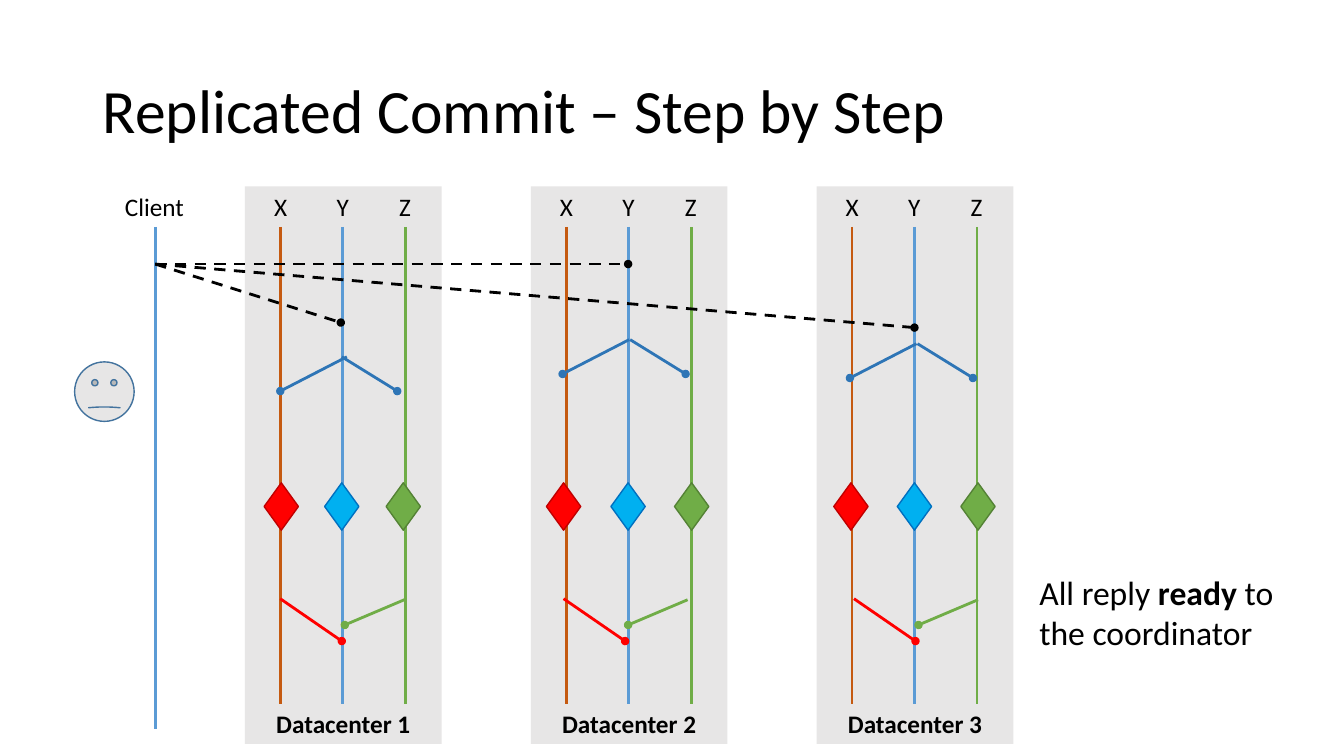
from dataclasses import dataclass

from lxml import etree
from pptx import Presentation
from pptx.dml.color import RGBColor
from pptx.enum.dml import MSO_LINE
from pptx.enum.shapes import MSO_CONNECTOR, MSO_SHAPE
from pptx.enum.text import MSO_ANCHOR, MSO_AUTO_SIZE, PP_ALIGN
from pptx.oxml.ns import qn
from pptx.shapes.autoshape import Shape
from pptx.slide import Slide
from pptx.util import Inches, Pt

STRAIGHT = MSO_CONNECTOR.STRAIGHT
DASH = MSO_LINE.DASH
RECTANGLE, DIAMOND, SMILEY = MSO_SHAPE.RECTANGLE, MSO_SHAPE.DIAMOND, MSO_SHAPE.SMILEY_FACE
MIDDLE, BOTTOM = MSO_ANCHOR.MIDDLE, MSO_ANCHOR.BOTTOM
CENTER = PP_ALIGN.CENTER
FIT_SHAPE = MSO_AUTO_SIZE.SHAPE_TO_FIT_TEXT

FONT = "Calibri"
BLACK = RGBColor(0x00, 0x00, 0x00)
GREY = RGBColor(0xE7, 0xE6, 0xE6)
ORANGE = RGBColor(0xC5, 0x5A, 0x11)
BLUE = RGBColor(0x5B, 0x9B, 0xD5)
MID_BLUE = RGBColor(0x2E, 0x75, 0xB6)
FACE_BLUE = RGBColor(0x43, 0x73, 0x9E)
SKY = RGBColor(0x00, 0xB0, 0xF0)
SKY_EDGE = RGBColor(0x00, 0x70, 0xC0)
GREEN = RGBColor(0x70, 0xAD, 0x47)
GREEN_EDGE = RGBColor(0x54, 0x82, 0x35)
RED = RGBColor(0xFF, 0x00, 0x00)
RED_EDGE = RGBColor(0xC0, 0x00, 0x00)

Point = tuple[float, float]
Frame = tuple[float, float, float, float]

TOP, LANE_TOP, LANE_BOTTOM = 1.85, 2.25, 6.98
FIRST_LEFT, PITCH = 2.43, 2.835
CLIENT_X = 1.54


@dataclass(frozen=True)
class Lane:
    name: str
    offset: float
    color: RGBColor
    vote_fill: RGBColor
    vote_edge: RGBColor


@dataclass(frozen=True)
class Datacenter:
    name: str
    request_end: Point
    fork_left_x: float
    fork_right_x: float
    fork_y: float
    vote_lefts: tuple[float, float, float]
    reply_x: float


LANES = (
    Lane("X", 0.35, ORANGE, RED, RED_EDGE),
    Lane("Y", 0.97, BLUE, SKY, SKY_EDGE),
    Lane("Z", 1.59, GREEN, GREEN, GREEN_EDGE),
)
DATACENTERS = (
    Datacenter("Datacenter 1", (3.38, 3.2), 3.44, 3.39, 3.54, (2.62, 3.22, 3.83), 2.78),
    Datacenter("Datacenter 2", (6.23, 2.62), 6.24, 6.25, 3.37, (5.42, 6.06, 6.69), 5.59),
    Datacenter("Datacenter 3", (9.07, 3.25), 9.09, 9.1, 3.41, (8.27, 8.9, 9.53), 8.47),
)


def style_text(shape: Shape, size: float, bold: bool = False) -> None:
    for para in shape.text_frame.paragraphs:
        for span in para.runs:
            span.font.name = FONT
            span.font.size = Pt(size)
            span.font.bold = bold
            span.font.color.rgb = BLACK


def add_text(page: Slide, frame: Frame, text: str, size: float, wrap: bool = False) -> Shape:
    box = page.shapes.add_textbox(*map(Inches, frame))
    box.text_frame.text = text
    box.text_frame.word_wrap = wrap
    box.text_frame.auto_size = FIT_SHAPE
    style_text(box, size)
    return box


def add_figure(page: Slide, kind: MSO_SHAPE, frame: Frame, fill: RGBColor,
               edge: RGBColor | None = None) -> Shape:
    figure = page.shapes.add_shape(kind, *map(Inches, frame))
    figure.shadow.inherit = False
    figure.fill.solid()
    figure.fill.fore_color.rgb = fill
    if edge is None:
        figure.line.fill.background()
    else:
        figure.line.color.rgb = edge
        figure.line.width = Pt(1)
    return figure


def add_line(page: Slide, start: Point, end: Point, color: RGBColor,
             dot: bool = False, dashed: bool = False) -> None:
    line = page.shapes.add_connector(STRAIGHT, *map(Inches, start + end))
    line.line.color.rgb = color
    line.line.width = Pt(2)
    if dashed:
        line.line.dash_style = DASH
    if dot:
        etree.SubElement(line.line._get_or_add_ln(), qn("a:tailEnd"), type="oval")
    etree.SubElement(line._element.spPr, qn("a:effectLst"))


def draw_datacenter(page: Slide, center: Datacenter, left: float) -> None:
    panel = add_figure(page, RECTANGLE, (left, TOP, 1.95, 5.53), GREY)
    panel.text_frame.text = center.name
    panel.text_frame.vertical_anchor = BOTTOM
    panel.text_frame.paragraphs[0].alignment = CENTER
    style_text(panel, 18, bold=True)
    for lane in LANES:
        x = left + lane.offset
        add_text(page, (x - 0.16, TOP, 0.33, 0.4), lane.name, 18)
        add_line(page, (x, LANE_TOP), (x, LANE_BOTTOM), lane.color)


def draw_messages(page: Slide, center: Datacenter) -> None:
    # Coordinator to its neighbours
    fork_end = center.fork_y + 0.34
    for x, reach in ((center.fork_left_x, -0.66), (center.fork_right_x, 0.55)):
        add_line(page, (x, center.fork_y), (x + reach, fork_end), MID_BLUE, dot=True)
    # Votes on each lane
    for lane, left in zip(LANES, center.vote_lefts):
        add_figure(page, DIAMOND, (left, 4.79, 0.34, 0.47), lane.vote_fill, lane.vote_edge)
    # Replies to the coordinator
    x = center.reply_x
    add_line(page, (x, 5.94), (x + 0.61, 6.36), RED, dot=True)
    add_line(page, (x + 1.23, 5.95), (x + 0.64, 6.2), GREEN, dot=True)


def main() -> None:
    deck = Presentation()
    deck.slide_width, deck.slide_height = Inches(13.33), Inches(7.5)
    page = deck.slides.add_slide(deck.slide_layouts[6])

    # Title
    title = add_text(page, (0.92, 0.4, 11.5, 1.45), "Replicated Commit – Step by Step", 44, True)
    title.text_frame.auto_size = MSO_AUTO_SIZE.NONE
    title.text_frame.vertical_anchor = MIDDLE
    title.text_frame.paragraphs[0].line_spacing = 0.9

    # Client and datacenters
    add_text(page, (1.14, TOP, 0.79, 0.4), "Client", 18)
    add_line(page, (CLIENT_X, LANE_TOP), (CLIENT_X, 7.23), BLUE)
    for index, center in enumerate(DATACENTERS):
        draw_datacenter(page, center, FIRST_LEFT + index * PITCH)

    # Client requests, then messages inside each datacenter
    for center in DATACENTERS:
        add_line(page, (CLIENT_X, 2.62), center.request_end, BLACK, dot=True, dashed=True)
    for center in DATACENTERS:
        draw_messages(page, center)

    # Explanation
    note = add_text(page, (10.21, 5.62, 2.58, 0.91), "All reply ", 24, True)
    para = note.text_frame.paragraphs[0]
    for words in ("ready", " to the coordinator"):
        para.add_run().text = words
    style_text(note, 24)
    para.runs[1].font.bold = True

    # Waiting client
    face = add_figure(page, SMILEY, (0.74, 3.59, 0.59, 0.59), GREY, FACE_BLUE)
    face.adjustments[0] = -0.007

    deck.save("out.pptx")


if __name__ == "__main__":
    main()
